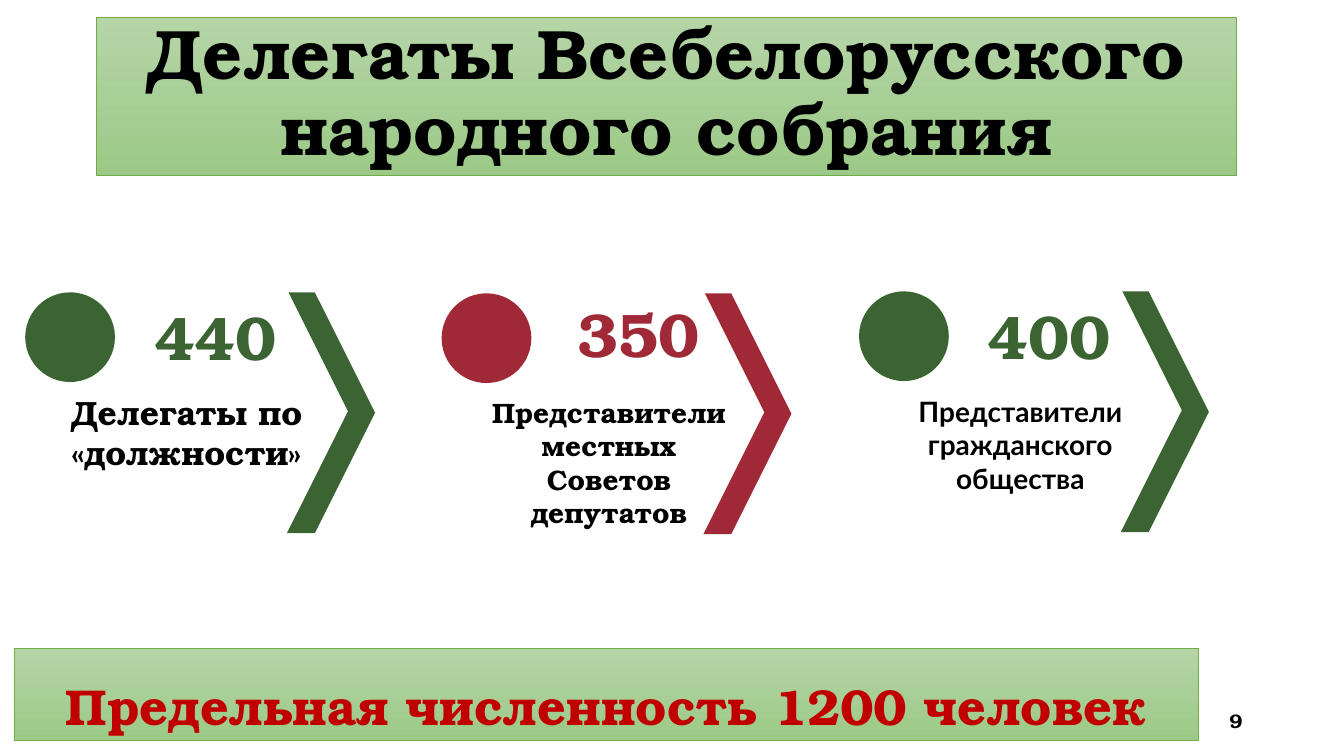
from pptx import Presentation
from pptx.dml.color import RGBColor
from pptx.enum.shapes import MSO_SHAPE
from pptx.enum.text import MSO_ANCHOR, MSO_AUTO_SIZE, PP_ALIGN
from pptx.util import Inches, Pt

HEXAGON, OVAL, RECTANGLE = MSO_SHAPE.HEXAGON, MSO_SHAPE.OVAL, MSO_SHAPE.RECTANGLE
LEFT, CENTER, RIGHT = PP_ALIGN.LEFT, PP_ALIGN.CENTER, PP_ALIGN.RIGHT
TOP, MIDDLE, BOTTOM = MSO_ANCHOR.TOP, MSO_ANCHOR.MIDDLE, MSO_ANCHOR.BOTTOM

SERIF, SANS = "TeX Gyre Bonum", "Lato"
TITLE_ONLY = 5
COLORS = {
    "white": "FFFFFF",
    "black": "000000",
    "green": "3B6432",
    "crimson": "9F2936",
    "red": "C00000",
    "banner_top": "B5D5A7",
    "banner_bottom": "9CC987",
    "banner_line": "70AD47",
}

# left, top, colour, number, number position, label, label box, label size, label font
DELEGATE_GROUPS = [
    (0.25, 2.9, "green", "440", (1.43, 2.92),
     "Делегаты по «должности»", (0.56, 3.84, 2.58, 0.91), 24, SERIF),
    (4.38, 2.91, "crimson", "350", (5.63, 2.89),
     "Представители местных Советов депутатов", (4.63, 3.87, 2.82, 1.45), 20, SERIF),
    (8.52, 2.89, "green", "400", (9.7, 2.91),
     "Представители гражданского общества", (8.71, 3.86, 2.82, 1.11), 20, SANS),
]


def rgb(name):
    return RGBColor.from_string(COLORS[name])


def inches(box):
    return [Inches(value) for value in box]


def write_text(shape, text, size, color="black", font=SERIF, align=CENTER,
               anchor=TOP, wrap=True, line_spacing=None):
    frame = shape.text_frame
    frame.text = text
    frame.auto_size = MSO_AUTO_SIZE.NONE
    frame.word_wrap = wrap
    frame.vertical_anchor = anchor
    paragraph = frame.paragraphs[0]
    paragraph.alignment = align
    paragraph.line_spacing = line_spacing
    paragraph.font.name = font
    paragraph.font.size = Pt(size)
    paragraph.font.bold = True
    paragraph.font.color.rgb = rgb(color)


def add_text(slide, box, text, **text_format):
    write_text(slide.shapes.add_textbox(*inches(box)), text, **text_format)


def add_plain_shape(slide, kind, box, color):
    shape = slide.shapes.add_shape(kind, *inches(box))
    shape.shadow.inherit = False
    shape.fill.solid()
    shape.fill.fore_color.rgb = rgb(color)
    shape.line.fill.background()


def style_banner(shape, text, **text_format):
    """Give a shape the green gradient, thin border and bottom-set heading."""
    shape.fill.gradient()
    shape.fill.gradient_angle = 270
    for stop, color in zip(shape.fill.gradient_stops, ("banner_top", "banner_bottom")):
        stop.color.rgb = rgb(color)
    shape.line.color.rgb = rgb("banner_line")
    shape.line.width = Pt(0.5)
    write_text(shape, text, anchor=BOTTOM, line_spacing=0.9, **text_format)


def add_title(slide, box, text):
    title = slide.shapes.title
    title.left, title.top, title.width, title.height = inches(box)
    style_banner(title, text, size=50)


def add_total(slide, box, text):
    banner = slide.shapes.add_shape(RECTANGLE, *inches(box))
    banner.shadow.inherit = False
    style_banner(banner, text, size=36, color="red")


def add_chevron(slide, left, top, color):
    """Draw a dot and a chevron, the latter a hexagon partly hidden by a white one."""
    add_plain_shape(slide, HEXAGON, (left + 0.7, top, 2.77, 2.39), color)
    add_plain_shape(slide, HEXAGON, (left, top - 0.2, 3.2, 2.76), "white")
    add_plain_shape(slide, OVAL, (left, top, 0.89, 0.89), color)


def main():
    presentation = Presentation()
    presentation.slide_width = Inches(13.33)
    presentation.slide_height = Inches(7.5)
    slide = presentation.slides.add_slide(presentation.slide_layouts[TITLE_ONLY])

    add_title(slide, (0.96, 0.17, 11.3, 1.57), "Делегаты Всебелорусского народного собрания")
    for left, top, color, number, position, label, label_box, size, font in DELEGATE_GROUPS:
        add_chevron(slide, left, top, color)
        add_text(slide, (*position, 1.42, 0.84), number, size=44, color=color,
                 align=LEFT, wrap=False)
        add_text(slide, label_box, label, size=size, font=font)
    add_text(slide, (9.42, 6.95, 3, 0.4), "9", size=14, align=RIGHT, anchor=MIDDLE)
    add_total(slide, (0.14, 6.43, 11.75, 0.92), "Предельная численность 1200 человек")

    presentation.save("out.pptx")


if __name__ == "__main__":
    main()
